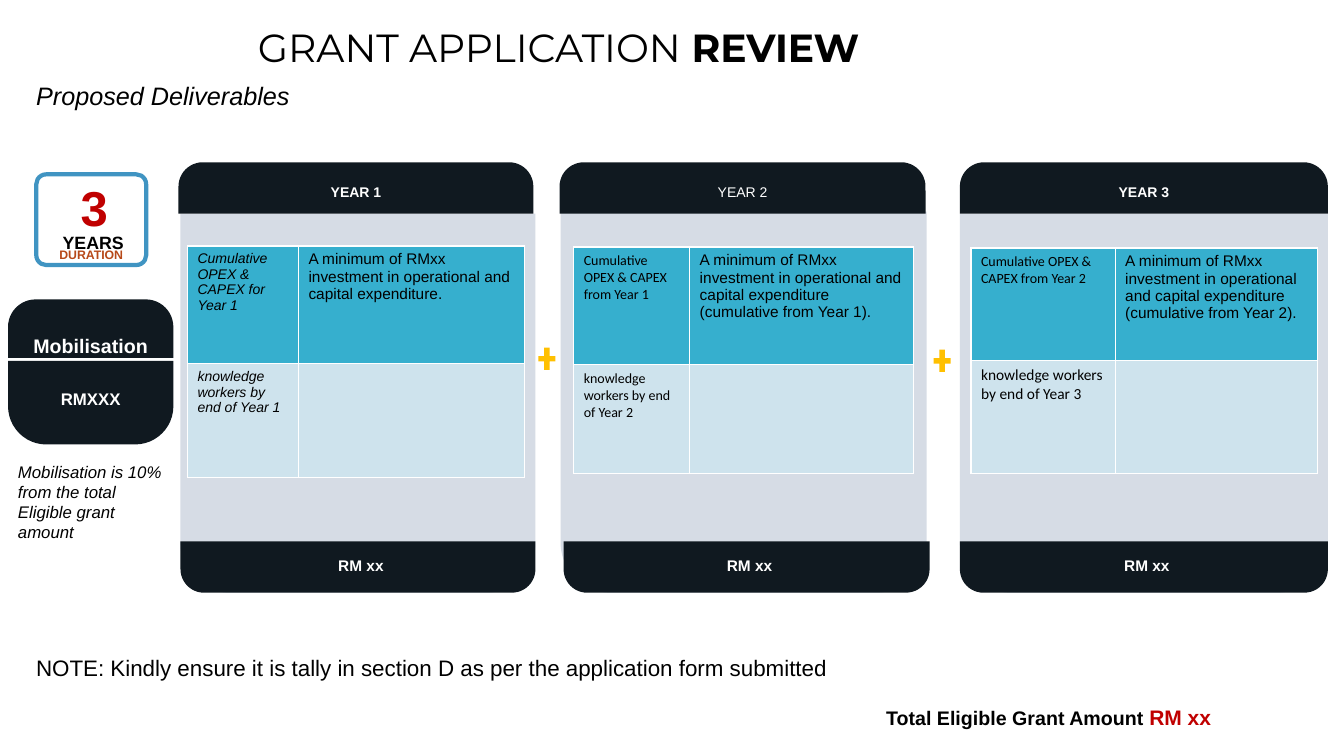
"""Builds the grant application review slide with its three yearly deliverable panels."""
from lxml.etree import SubElement
from pptx import Presentation
from pptx.dml.color import RGBColor
from pptx.enum.shapes import MSO_SHAPE as Preset
from pptx.enum.text import MSO_ANCHOR as Anchor, MSO_AUTO_SIZE as AutoSize, PP_ALIGN as Align
from pptx.oxml.ns import qn
from pptx.util import Inches, Pt

BLACK, WHITE, NAVY, RED = "000000", "FFFFFF", "101920", "C00000"
TEAL, PALE, GREY, GOLD = "36AFCE", "CEE3ED", "D6DCE5", "FFC000"
ORANGE, BLUE = "B74919", "4094C2"
INSETS = (0.1, 0.05, 0.1, 0.05)


def color(code):
    return RGBColor.from_string(code)


class ReviewSlide:
    def __init__(self, deck):
        self.page = deck.slides.add_slide(deck.slide_layouts[5])
        self.font = "Arial"

    def style(self, para, size, code=BLACK, bold=False, italic=False, font=None):
        for span in para.runs:
            span.font.name = font or self.font
            span.font.size = Pt(size)
            span.font.bold, span.font.italic = bold, italic
            span.font.color.rgb = color(code)

    def frame(self, holder, text, size, align=Align.LEFT, spacing=1.0,
              anchor=Anchor.TOP, insets=INSETS, **look):
        frame = holder.text_frame
        frame.text = text
        frame.word_wrap, frame.auto_size = True, AutoSize.NONE
        frame.vertical_anchor = anchor
        (frame.margin_left, frame.margin_top,
         frame.margin_right, frame.margin_bottom) = map(Inches, insets)
        para = frame.paragraphs[0]
        para.alignment, para.line_spacing = align, spacing
        self.style(para, size, **look)
        return para

    def append(self, para, text, size, **look):
        span = para.add_run()
        span.text = text
        span.font.name = look.get("font", self.font)
        span.font.size, span.font.bold = Pt(size), True
        span.font.color.rgb = color(look.get("code", BLACK))

    def title(self, box, text, strong):
        holder = self.page.shapes.title
        holder.left, holder.top, holder.width, holder.height = map(Inches, box)
        para = self.frame(holder, text, 28, Align.CENTER, 0.9, Anchor.BOTTOM, font="Montserrat")
        self.append(para, strong, 28, font="Montserrat")

    def text(self, box, text, size, **look):
        return self.frame(self.page.shapes.add_textbox(*map(Inches, box)), text, size, **look)

    def shape(self, preset, box, fill=None, corners=(), line=None):
        shape = self.page.shapes.add_shape(preset, *map(Inches, box))
        shape.shadow.inherit = False
        for index, corner in enumerate(corners):
            shape.adjustments[index] = corner
        if fill:
            shape.fill.solid()
            shape.fill.fore_color.rgb = color(fill)
        else:
            shape.fill.background()
        if line:
            shape.line.color.rgb, shape.line.width = color(line), Pt(3)
        else:
            shape.line.fill.background()
        return shape

    def cap(self, box, text, size, bold=True, anchor=Anchor.MIDDLE):
        shape = self.shape(Preset.ROUND_2_SAME_RECTANGLE, box, NAVY, (0.472, 0))
        self.frame(shape, text, size, Align.CENTER, anchor=anchor,
                   insets=(0, 0, 0, 0), code=WHITE, bold=bold)

    def base(self, box, text, size, insets):
        shape = self.shape(Preset.ROUND_2_SAME_RECTANGLE, box, NAVY, (0, 0.458))
        self.frame(shape, text, size, Align.CENTER, 1.15, Anchor.MIDDLE,
                   insets, code=WHITE, bold=True)

    def year(self, name, width, panel, cap_left, base_left, bold):
        left, top = panel
        self.shape(Preset.ROUND_2_SAME_RECTANGLE, (left, top, width, 5.88 - top), GREY, (0, 0.138))
        self.cap((cap_left, 1.61, width, 0.51), name, 10, bold)
        self.base((base_left, 5.37, width, 0.51), "RM xx", 11, (0.12, 0.09, 0.06, 0.09))

    def table(self, corner, columns, rows, texts, label_looks):
        box = (*corner, sum(columns), sum(rows))
        grid = self.page.shapes.add_table(2, 2, *map(Inches, box)).table
        grid.first_row = grid.horz_banding = False
        for index in range(2):
            grid.columns[index].width = Inches(columns[index])
            grid.rows[index].height = Inches(rows[index])
        label, goal, workers = texts
        looks = (label_looks[0], {"size": 11}, label_looks[1], {"size": 11})
        for cell, text, look, fill in zip(grid.iter_cells(), (label, goal, workers, ""),
                                          looks, (TEAL, TEAL, PALE, PALE)):
            cell.text = text
            self.style(cell.text_frame.paragraphs[0], **look)
            self.border(cell)
            cell.fill.solid()
            cell.fill.fore_color.rgb = color(fill)

    def border(self, cell):
        properties = cell._tc.get_or_add_tcPr()
        for side in ("a:lnL", "a:lnR", "a:lnT", "a:lnB"):
            line = SubElement(properties, qn(side), w=str(Pt(1)))
            SubElement(SubElement(line, qn("a:solidFill")), qn("a:srgbClr"), val=WHITE)


def main():
    deck = Presentation()
    deck.slide_width, deck.slide_height = Inches(13.33), Inches(7.5)
    review = ReviewSlide(deck)

    review.title((-0.21, 0.16, 11.5, 0.59), "GRANT APPLICATION", " REVIEW")
    review.text((0.26, 0.6, 8.16, 0.44), "Proposed Deliverables", 18, spacing=1.5, italic=True)

    review.cap((0.08, 2.97, 1.64, 0.58), "Mobilisation", 14, anchor=Anchor.BOTTOM)
    review.base((0.08, 3.58, 1.64, 0.83), "RMXXX", 12, (0.08, 0.12, 0.08, 0.12))
    review.text((0.08, 4.53, 1.64, 0.91),
                "Mobilisation is 10% from the total Eligible grant amount",
                12, italic=True)

    review.year("YEAR 1", 3.52, (1.79, 2.12), 1.77, 1.79, True)
    review.year("YEAR 2", 3.63, (5.56, 2.1), 5.55, 5.59, False)
    review.year("YEAR 3", 3.65, (9.52, 2.12), 9.52, 9.52, True)
    for left, top in ((5.31, 3.41), (9.23, 3.43)):
        review.shape(Preset.MATH_PLUS, (left, top, 0.23, 0.3), GOLD)

    goal = "A minimum of RMxx investment in operational and capital expenditure"
    slanted = {"size": 10, "italic": True}
    small = {"size": 10, "font": "Calibri"}
    large = {"size": 11, "font": "Calibri"}
    review.table((1.86, 2.44), (1.1, 2.24), (1.17, 1.13),
                 ("Cumulative OPEX & CAPEX for Year 1", f"{goal}.",
                  "knowledge workers by end of Year 1"), (slanted, slanted))
    review.table((5.69, 2.45), (1.15, 2.22), (1.17, 1.08),
                 ("Cumulative OPEX & CAPEX from Year 1", f"{goal} (cumulative from Year 1).",
                  "knowledge workers by end of Year 2"), (small, small))
    review.table((9.63, 2.46), (1.43, 2.01), (1.12, 1.12),
                 ("Cumulative OPEX & CAPEX from Year 2", f"{goal} (cumulative from Year 2).",
                  "knowledge workers by end of Year 3"), (small, large))

    total = review.text((8.69, 6.94, 4.47, 0.35), "Total Eligible Grant Amount ", 14, bold=True)
    review.append(total, "RM xx", 15, code=RED)

    tight = (0.08, 0.04, 0.08, 0.04)
    review.shape(Preset.ROUNDED_RECTANGLE, (0.36, 1.73, 1.09, 0.9), None, (0.109,), BLUE)
    review.text((0.36, 2.42, 1.09, 0.23), "DURATION", 8.8, align=Align.CENTER,
                spacing=0.9, code=ORANGE, bold=True)
    review.text((0.37, 2.15, 1.11, 0.32), "YEARS", 12.7, align=Align.CENTER,
                spacing=1.5, insets=tight, bold=True)
    review.text((0.39, 1.72, 1.09, 0.55), "3", 35, align=Align.CENTER,
                insets=tight, code=RED, bold=True)
    review.text((0.26, 6.44, 11.74, 0.37),
                "NOTE: Kindly ensure it is tally in section D as per the application form submitted",
                16, align=Align.JUSTIFY)
    deck.save("out.pptx")


if __name__ == "__main__":
    main()
